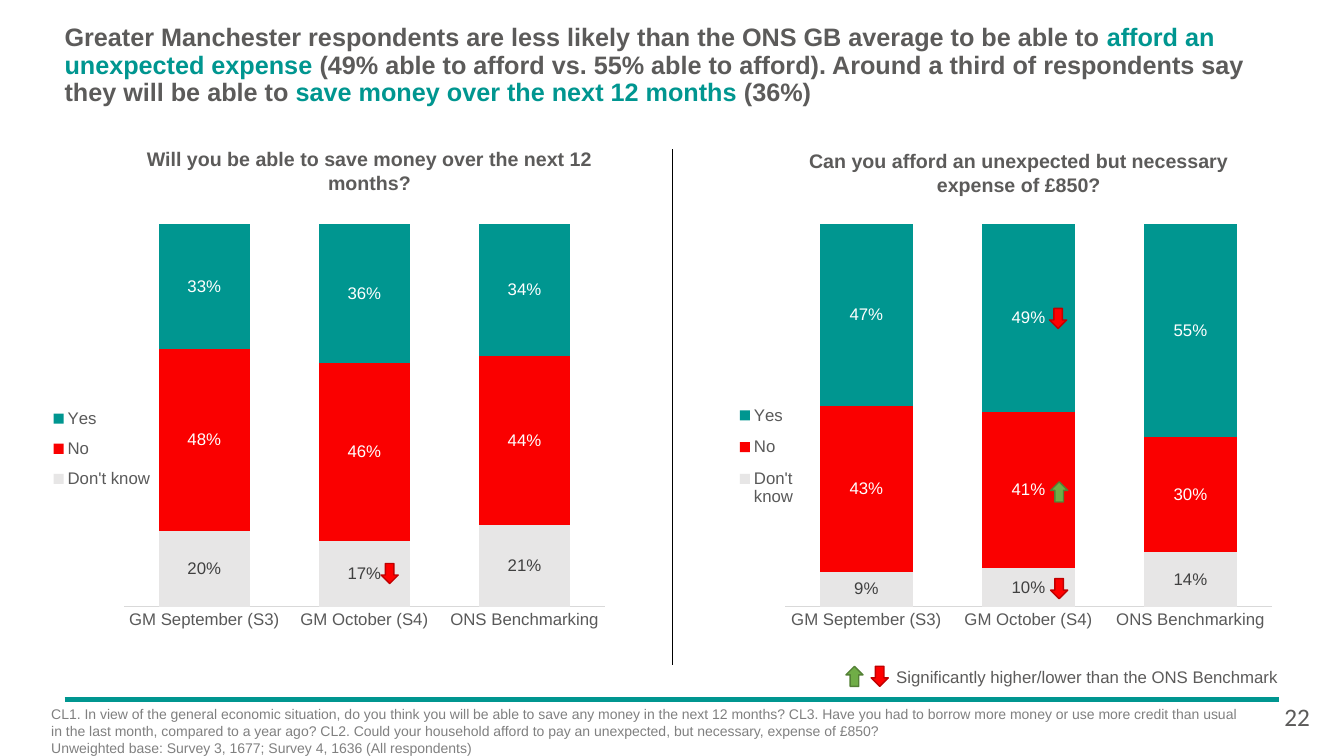
from lxml import etree
from pptx import Presentation
from pptx.chart.data import CategoryChartData
from pptx.dml.color import RGBColor
from pptx.enum.chart import XL_CHART_TYPE, XL_LABEL_POSITION, XL_LEGEND_POSITION, XL_TICK_MARK
from pptx.enum.shapes import MSO_CONNECTOR, MSO_SHAPE
from pptx.enum.text import MSO_ANCHOR, MSO_AUTO_SIZE, PP_ALIGN
from pptx.oxml import parse_xml
from pptx.oxml.ns import nsdecls, qn
from pptx.util import Inches, Pt

STACKED = XL_CHART_TYPE.COLUMN_STACKED_100
CENTER = XL_LABEL_POSITION.CENTER
LEFT_KEY = XL_LEGEND_POSITION.LEFT
NO_TICK = XL_TICK_MARK.NONE
STRAIGHT = MSO_CONNECTOR.STRAIGHT
DOWN = MSO_SHAPE.DOWN_ARROW
TOP = MSO_ANCHOR.TOP
NO_FIT = MSO_AUTO_SIZE.NONE
LEFT, MIDDLE = PP_ALIGN.LEFT, PP_ALIGN.CENTER
TEAL, GREY = "009690", "5C5B5A"
color = RGBColor.from_string


def style(font, size, tint, bold=False, face="Arial"):
    font.name, font.size, font.bold = face, Pt(size), bold
    font.color.rgb = color(tint)


def add_text(box, lines, size, tint, bold=False, align=LEFT, inset=True, wrap=True, face="Arial"):
    frame = slide.shapes.add_textbox(*map(Inches, box)).text_frame
    frame.word_wrap = wrap
    if not inset:
        frame.margin_left = frame.margin_top = frame.margin_right = frame.margin_bottom = 0
    frame.text = "\n".join(lines)
    for para in frame.paragraphs:
        para.alignment = align
        style(para.font, size, tint, bold, face)


deck = Presentation()
deck.slide_width, deck.slide_height = Inches(13.33), Inches(7.5)
slide = deck.slides.add_slide(deck.slide_layouts[5])

title = slide.shapes.title
title.left, title.top, title.width, title.height = map(Inches, (0.64, 0.25, 12.16, 0.87))
frame = title.text_frame
frame.margin_left = frame.margin_top = frame.margin_right = frame.margin_bottom = 0
frame.word_wrap, frame.auto_size, frame.vertical_anchor = True, NO_FIT, TOP
para = frame.paragraphs[0]
para.alignment, para.line_spacing = LEFT, 0.9
style(para.font, 18, GREY, True)
for words, tint in [
    ("Greater Manchester respondents are less likely than the ONS GB average to be able to ", GREY),
    ("afford an unexpected expense ", TEAL),
    ("(49% able to afford vs. 55% able to afford). Around a third of respondents say "
     "they will be able to ", GREY),
    ("save money over the next 12 months ", TEAL),
    ("(36%)", GREY),
]:
    run = para.add_run()
    run.text = words
    run.font.color.rgb = color(tint)

add_text((1.29, 1.46, 4.75, 0.47), ["Will you be able to save money over the next 12 months?"],
         14, GREY, True, MIDDLE, inset=False)
add_text((7.73, 1.48, 4.75, 0.47), ["Can you afford an unexpected but necessary expense of £850?"],
         14, GREY, True, MIDDLE, inset=False)

waves = ["GM September (S3)", "GM October (S4)", "ONS Benchmarking"]
looks = [("Don't know", "E7E6E6", "404040"), ("No", "FA0000", "FFFFFF"), ("Yes", TEAL, "FFFFFF")]
charts = [
    (0.53, [(0.2, 0.17, 0.21), (0.48, 0.46, 0.44), (0.33, 0.36, 0.34)],
     (0.124, 0.026, 0.842, 0.782), (0, 0.38, 0.17, 0.21)),
    (7.15, [(0.09, 0.1, 0.14), (0.43, 0.41, 0.3), (0.47, 0.49, 0.55)],
     (0.113, 0.026, 0.852, 0.782), (0.02, 0.37, 0.12, 0.26)),
]
for left, rows, plot_box, key_box in charts:
    data = CategoryChartData(number_format="0%")
    data.categories = waves
    for (name, fill, ink), row in zip(looks, rows):
        data.add_series(name, row)
    chart = slide.shapes.add_chart(
        STACKED, Inches(left), Inches(2.1), Inches(5.66), Inches(4.85), data).chart
    style(chart.font, 10, "000000")
    chart.has_title = False
    chart.has_legend = True
    chart.legend.position = LEFT_KEY
    chart.legend.include_in_layout = False
    style(chart.legend.font, 12, "595959")

    axis = chart.category_axis
    axis.major_tick_mark = axis.minor_tick_mark = NO_TICK
    axis.format.line.color.rgb = color("D9D9D9")
    axis.format.line.width = Pt(0.75)
    style(axis.tick_labels.font, 12, "595959")
    chart.value_axis.visible = False
    chart.value_axis.has_major_gridlines = False

    plot = chart.plots[0]
    plot.gap_width, plot.overlap = 75, 100
    plot.vary_by_categories = False
    for series, (name, fill, ink) in zip(plot.series, looks):
        series.format.fill.solid()
        series.format.fill.fore_color.rgb = color(fill)
        labels = series.data_labels
        labels.show_value = True
        labels.position = CENTER
        labels.number_format, labels.number_format_is_linked = "0%", False
        style(labels.font, 12, ink)

    root = chart._chartSpace.chart
    for tag, box, index in [("c:plotArea", plot_box, 0), ("c:legend", key_box, 1)]:
        part = root.find(qn(tag))
        for old in part.findall(qn("c:layout")):
            part.remove(old)
        layout = parse_xml(f"<c:layout {nsdecls('c')}><c:manualLayout/></c:layout>")
        marks = [("xMode", "edge"), ("yMode", "edge"), *zip("xywh", box)]
        if tag == "c:plotArea":
            marks.insert(0, ("layoutTarget", "inner"))
        for mark, value in marks:
            etree.SubElement(layout[0], qn("c:" + mark)).set("val", str(value))
        part.insert(index, layout)

for start, end, tint, width in [
    ((0.64, 6.94), (12.69, 6.94), TEAL, 3),
    ((6.67, 1.48), (6.67, 6.6), "000000", 0.5),
]:
    line = slide.shapes.add_connector(STRAIGHT, *map(Inches, start + end))
    line.line.color.rgb = color(tint)
    line.line.width = Pt(width)
    etree.SubElement(line._element.spPr, qn("a:effectLst"))

for left, top, higher in [
    (8.64, 6.61, False), (8.39, 6.61, True),
    (10.41, 3.06, False), (10.42, 4.78, True), (10.42, 5.74, False), (3.78, 5.59, False),
]:
    arrow = slide.shapes.add_shape(DOWN, Inches(left), Inches(top), Inches(0.17), Inches(0.2))
    arrow.rotation = 180 if higher else 0
    arrow.shadow.inherit = False
    arrow.fill.solid()
    arrow.fill.fore_color.rgb = color("70AD47" if higher else "FF0000")
    arrow.line.color.rgb = color("538035" if higher else "C00000")
    arrow.line.width = Pt(1)

add_text((8.79, 6.57, 4.02, 0.3), ["Significantly higher/lower than the ONS Benchmark"],
         12, GREY, wrap=False)
add_text((0.41, 6.95, 11.98, 0.56), [
    "CL1. In view of the general economic situation, do you think you will be able to save any "
    "money in the next 12 months? CL3. Have you had to borrow more money or use more credit than "
    "usual in the last month, compared to a year ago? CL2. Could your household afford to pay an "
    "unexpected, but necessary, expense of £850?",
    "Unweighted base: Survey 3, 1677; Survey 4, 1636 (All respondents)",
], 10, "808080")
add_text((12.64, 6.91, 0.53, 0.4), ["22"], 18, GREY, face="Calibri")

deck.save("out.pptx")
